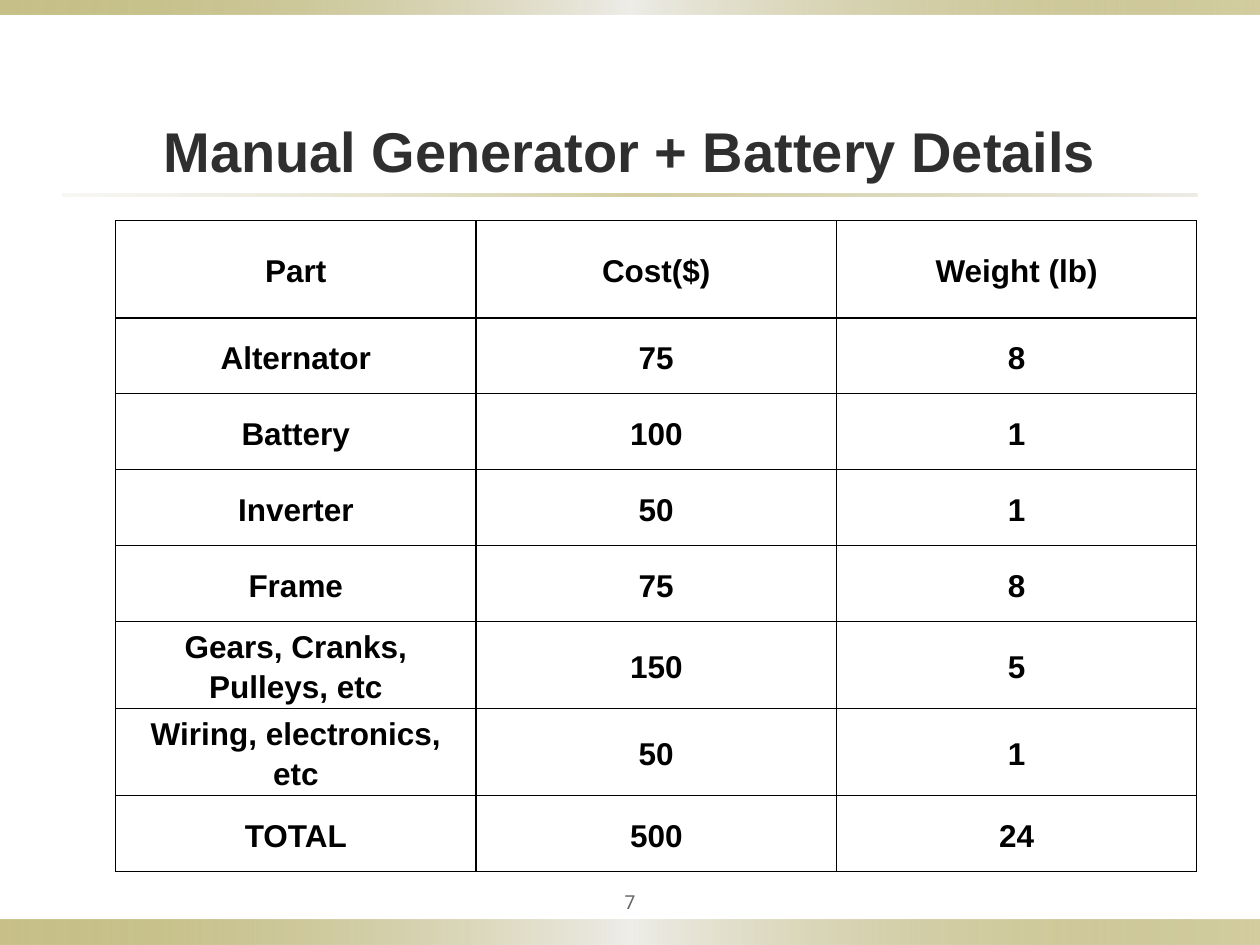
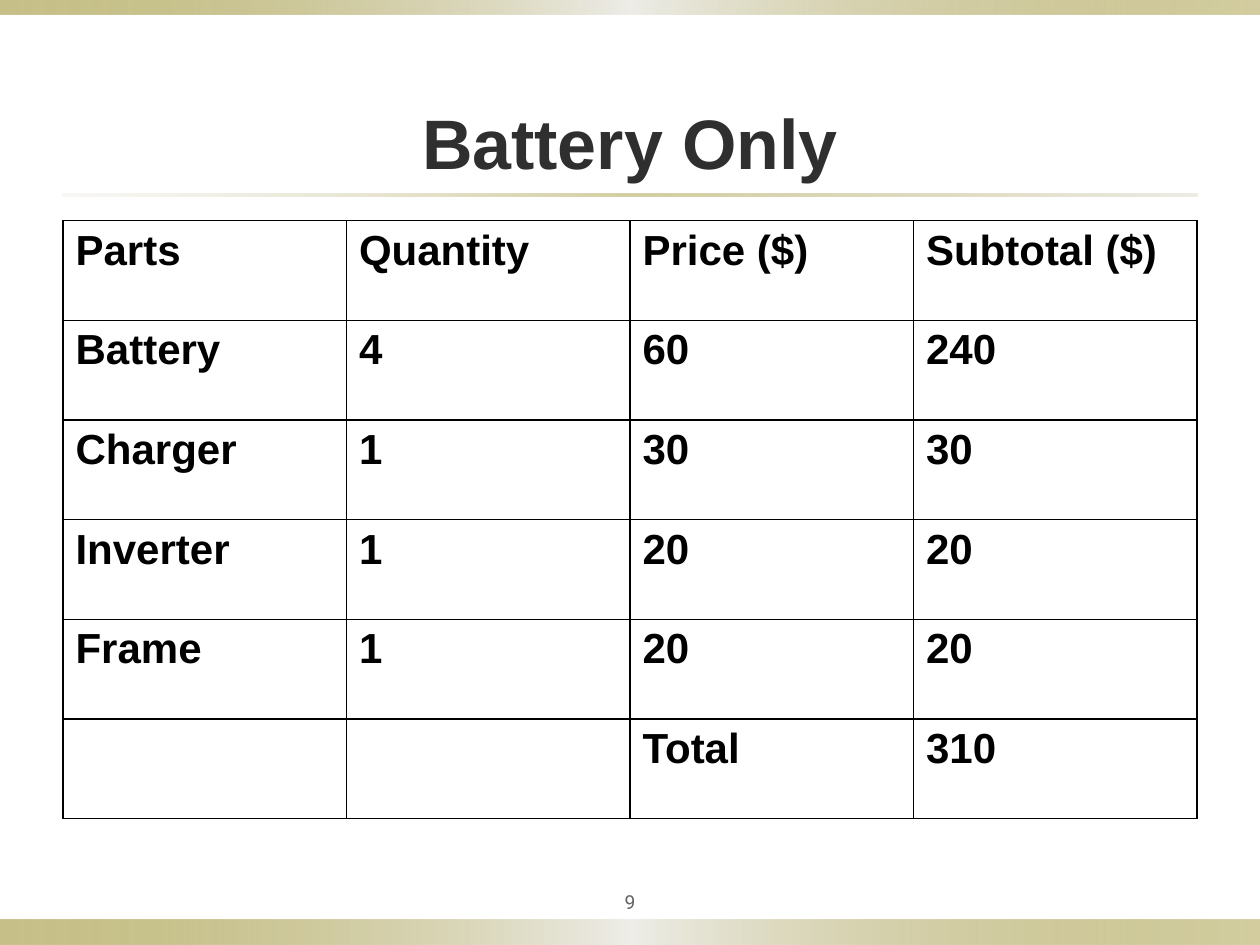
import pptx
import pptx.dml.color
import pptx.enum.shapes
import pptx.enum.text
import pptx.oxml.ns
import pptx.util
from lxml import etree
from pptx.util import Cm

RGBColor = pptx.dml.color.RGBColor
Anchor = pptx.enum.text.MSO_ANCHOR
Align = pptx.enum.text.PP_ALIGN
qn = pptx.oxml.ns.qn

# Shared colours and fonts
OLIVE = RGBColor(0x91, 0x84, 0x15)
PALE = RGBColor(0xEE, 0xED, 0xE8)
SAND = RGBColor(0xDC, 0xD9, 0xCC)
TITLE_COLOR = RGBColor(0x2F, 0x2F, 0x2F)
NUMBER_COLOR = RGBColor(0x63, 0x63, 0x63)
BLACK = RGBColor(0, 0, 0)
WHITE = RGBColor(0xFF, 0xFF, 0xFF)
MAIN_FONT = "Arial"
NUMBER_FONT = "Roboto"

# Gradient stops: position %, colour, opacity %
BAND_STOPS = [(0, OLIVE, 50), (50, PALE, 100), (100, OLIVE, 40)]
RULE_STOPS = [(0, SAND, 20), (50, OLIVE, 40), (100, SAND, 50)]

# Shared measures
SLIDE_WIDTH, SLIDE_HEIGHT = Cm(25.4), Cm(19.05)
MARGIN = Cm(1.27)
CONTENT_WIDTH = SLIDE_WIDTH - 2 * MARGIN
TITLE_BOTTOM = Cm(3.95)
TABLE_TOP = Cm(4.45)

GENERATOR_ROWS = [
    ("Part", "Cost($)", "Weight (lb)"),
    ("Alternator", "75", "8"),
    ("Battery", "100", "1"),
    ("Inverter", "50", "1"),
    ("Frame", "75", "8"),
    ("Gears, Cranks, Pulleys, etc", "150", "5"),
    ("Wiring, electronics, etc", "50", "1"),
    ("TOTAL", "500", "24"),
]
BATTERY_ROWS = [
    ("Parts", "Quantity", "Price ($)", "Subtotal ($)"),
    ("Battery", "4", "60", "240"),
    ("Charger", "1", "30", "30"),
    ("Inverter", "1", "20", "20"),
    ("Frame", "1", "20", "20"),
    ("", "", "Total", "310"),
]


def style_paragraph(paragraph, font_name, size, color, bold=False, align=Align.LEFT):
    paragraph.alignment = align
    font = paragraph.font
    font.name, font.size, font.bold = font_name, pptx.util.Pt(size), bold
    font.color.rgb = color


def set_insets(text_frame, inset):
    text_frame.margin_left = text_frame.margin_right = inset
    text_frame.margin_top = text_frame.margin_bottom = inset


def add_gradient_bar(slide, left, top, width, height, stops):
    shape = slide.shapes.add_shape(
        pptx.enum.shapes.MSO_SHAPE.RECTANGLE, left, top, width, height)
    shape.shadow.inherit = False
    shape.line.fill.background()
    shape.fill.gradient()
    shape.fill.gradient_angle = 0
    # Semi-transparent stops need XML
    stop_list = shape.element.find(".//" + qn("a:gsLst"))
    for old_stop in list(stop_list):
        stop_list.remove(old_stop)
    for position, color, opacity in stops:
        stop = etree.SubElement(stop_list, qn("a:gs"), pos=str(position * 1000))
        color_element = etree.SubElement(stop, qn("a:srgbClr"), val=str(color))
        etree.SubElement(color_element, qn("a:alpha"), val=str(opacity * 1000))


def add_title(slide, text, size, height):
    title = slide.shapes.title
    title.left, title.top = MARGIN, TITLE_BOTTOM - height
    title.width, title.height = CONTENT_WIDTH, height
    frame = title.text_frame
    frame.text = text
    frame.word_wrap = True
    frame.auto_size = pptx.enum.text.MSO_AUTO_SIZE.SHAPE_TO_FIT_TEXT
    frame.vertical_anchor = Anchor.BOTTOM
    set_insets(frame, Cm(0.25))
    style_paragraph(frame.paragraphs[0], MAIN_FONT, size, TITLE_COLOR, True, Align.CENTER)


def add_page_number(slide, number):
    width = Cm(2.54)
    box = slide.shapes.add_textbox((SLIDE_WIDTH - width) // 2, Cm(17.78), width, Cm(0.79))
    frame = box.text_frame
    frame.text = str(number)
    frame.word_wrap = True
    frame.vertical_anchor = Anchor.MIDDLE
    set_insets(frame, Cm(0.13))
    style_paragraph(frame.paragraphs[0], NUMBER_FONT, 11, NUMBER_COLOR, align=Align.CENTER)


def add_slide(presentation, title, title_size, title_height, number):
    slide = presentation.slides.add_slide(presentation.slide_layouts[5])
    # Bands at the foot and head, rule below the title
    add_gradient_bar(slide, 0, Cm(18.54), SLIDE_WIDTH, Cm(0.51), BAND_STOPS)
    add_gradient_bar(slide, 0, 0, SLIDE_WIDTH, Cm(0.3), BAND_STOPS)
    add_gradient_bar(slide, MARGIN, Cm(3.91), CONTENT_WIDTH, Cm(0.05), RULE_STOPS)
    add_title(slide, title, title_size, title_height)
    add_page_number(slide, number)
    return slide


def add_cell_borders(cell):
    properties = cell._tc.get_or_add_tcPr()
    for index, side in enumerate(("a:lnL", "a:lnR", "a:lnT", "a:lnB")):
        line = etree.Element(qn(side), w=str(pptx.util.Pt(0.75)))
        fill = etree.SubElement(line, qn("a:solidFill"))
        etree.SubElement(fill, qn("a:srgbClr"), val=str(BLACK))
        properties.insert(index, line)


def add_grid(slide, rows, left, width, row_height, font_size, align=Align.LEFT):
    """Draw a ruled table with equal columns and return it."""
    column_count = len(rows[0])
    table = slide.shapes.add_table(
        len(rows), column_count, left, TABLE_TOP, width, row_height * len(rows)).table
    table.first_row = table.horz_banding = False
    for row, texts in zip(table.rows, rows):
        row.height = row_height
        for cell, text in zip(row.cells, texts):
            cell.text = text
            cell.fill.solid()
            cell.fill.fore_color.rgb = WHITE
            add_cell_borders(cell)
            style_paragraph(cell.text_frame.paragraphs[0],
                            MAIN_FONT, font_size, BLACK, True, align)
    return table


def center_cells(table):
    for cell in table.iter_cells():
        cell.vertical_anchor = Anchor.MIDDLE
        cell.margin_left = cell.margin_right = Cm(0.18)
        cell.margin_top = cell.margin_bottom = 0
        paragraph = cell.text_frame.paragraphs[0]
        paragraph.line_spacing = 1.15
        paragraph.space_after = pptx.util.Pt(10)


def main():
    presentation = pptx.Presentation()
    presentation.slide_width, presentation.slide_height = SLIDE_WIDTH, SLIDE_HEIGHT

    # Generator parts: centred cells, taller heading row
    slide = add_slide(presentation, "Manual Generator + Battery Details", 32, Cm(1.88), 7)
    table = add_grid(slide, GENERATOR_ROWS, Cm(2.33), Cm(21.8), Cm(1.53), 18, Align.CENTER)
    table.rows[0].height = Cm(1.96)
    center_cells(table)

    # Battery parts
    slide = add_slide(presentation, "Battery Only", 40, Cm(2.24), 9)
    add_grid(slide, BATTERY_ROWS, MARGIN, CONTENT_WIDTH, Cm(2.01), 24)

    presentation.save("out.pptx")


if __name__ == "__main__":
    main()
